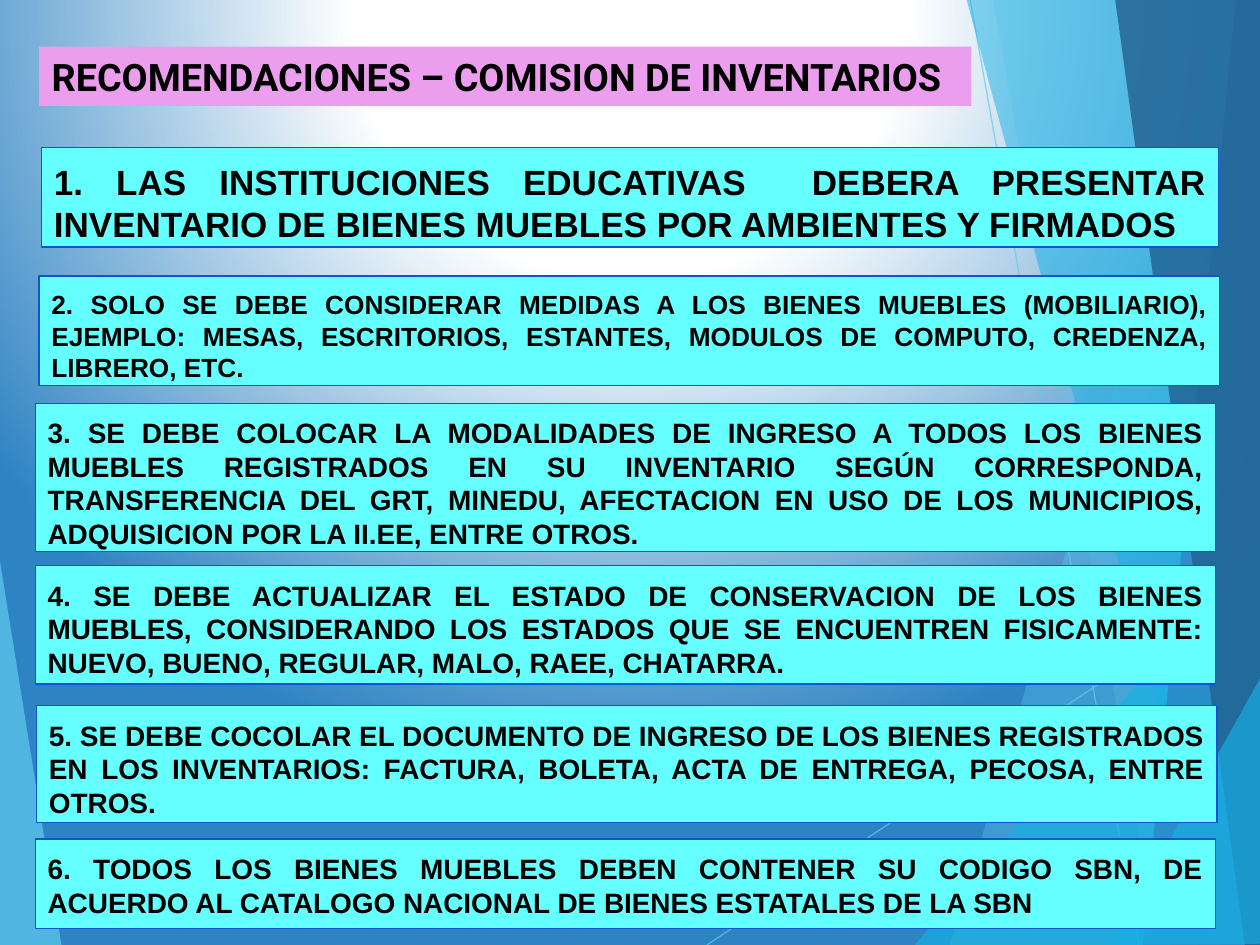
"""Build the slide of recommendations for the inventory commission."""
from dataclasses import dataclass

import lxml.etree
import pptx
import pptx.dml.color
import pptx.enum.shapes
import pptx.enum.text
import pptx.oxml
import pptx.oxml.ns
import pptx.util

Inches = pptx.util.Inches
Pt = pptx.util.Pt
qn = pptx.oxml.ns.qn


@dataclass(frozen=True)
class Theme:
    """Colours, fonts and sizes of the slide."""
    sky: str = "5FCBEF"
    cyan: str = "17B0E4"
    blue: str = "2E83C3"
    navy: str = "226292"
    white: str = "FFFFFF"
    text: str = "000000"
    title_fill: str = "EC9EEE"
    box_fill: str = "66FFFF"
    box_line: str = "1155CC"
    title_font: str = "Roboto"
    body_font: str = "Arial"
    title_size: float = 21.6
    large: float = 20
    medium: float = 16
    small: float = 15
    line_width: float = 0.75
    inset: float = 0.1


THEME = Theme()

FACETS = [
    ([(-0.01, 4.39), (0.49, 7.51), (-0.01, 7.5)], THEME.sky, 70),
    ([(9.75, 0), (7.54, 7.5), (10.02, 7.51), (10.01, 0.01)], THEME.sky, 36),
    ([(7.88, -0.01), (9.19, 7.5), (10.01, 7.5), (10.01, -0.01)], THEME.sky, 20),
    ([(7.26, 7.5), (10, 4.29), (10.01, 7.5)], THEME.cyan, 66),
    ([(7.67, -0.01), (9.7, 7.5), (10.01, 7.49), (10.01, -0.01)], THEME.cyan, 50),
    ([(9.81, -0.01), (9.07, 7.5), (10.01, 7.5), (10, -0.01)], THEME.blue, 70),
    ([(8.85, -0.01), (9.88, 7.5), (10.02, 7.5), (10, -0.01)], THEME.navy, 82),
    ([(8.82, 7.5), (10.02, 5.35), (10.02, 7.49)], THEME.cyan, 66),
]

RAYS = [((5.61, 7.5), (10.01, 4.57)), ((7.7, 0), (9.04, 7.5))]

RECOMMENDATIONS = [
    ((0.33, 1.17, 9.34, 0.79), THEME.large,
     "1. LAS INSTITUCIONES EDUCATIVAS  DEBERA PRESENTAR INVENTARIO DE BIENES "
     "MUEBLES POR AMBIENTES Y FIRMADOS"),
    ((0.31, 2.19, 9.37, 0.87), THEME.small,
     "2. SOLO SE DEBE CONSIDERAR MEDIDAS A LOS BIENES MUEBLES (MOBILIARIO), "
     "EJEMPLO: MESAS, ESCRITORIOS, ESTANTES, MODULOS DE COMPUTO, CREDENZA, "
     "LIBRERO, ETC."),
    ((0.28, 3.2, 9.37, 1.18), THEME.medium,
     "3. SE DEBE COLOCAR LA MODALIDADES DE INGRESO A TODOS LOS BIENES MUEBLES "
     "REGISTRADOS EN SU INVENTARIO SEGÚN CORRESPONDA, TRANSFERENCIA DEL GRT, "
     "MINEDU, AFECTACION EN USO DE LOS MUNICIPIOS, ADQUISICION POR LA II.EE, "
     "ENTRE OTROS."),
    ((0.28, 4.49, 9.37, 0.94), THEME.medium,
     "4. SE DEBE ACTUALIZAR EL ESTADO DE CONSERVACION DE LOS BIENES MUEBLES, "
     "CONSIDERANDO LOS ESTADOS QUE SE ENCUENTREN FISICAMENTE: NUEVO, BUENO, "
     "REGULAR, MALO, RAEE, CHATARRA."),
    ((0.29, 5.6, 9.37, 0.93), THEME.medium,
     "5. SE DEBE COCOLAR EL DOCUMENTO DE INGRESO DE LOS BIENES REGISTRADOS EN "
     "LOS INVENTARIOS: FACTURA, BOLETA, ACTA DE ENTREGA, PECOSA, ENTRE OTROS."),
    ((0.28, 6.66, 9.37, 0.71), THEME.medium,
     "6. TODOS LOS BIENES MUEBLES DEBEN CONTENER SU CODIGO SBN, DE ACUERDO AL "
     "CATALOGO NACIONAL DE BIENES ESTATALES DE LA SBN"),
]


def rgb(value):
    """Return the colour object of a hexadecimal value."""
    return pptx.dml.color.RGBColor.from_string(value)


def set_fill(shape, colour):
    """Give a shape a solid fill."""
    shape.fill.solid()
    shape.fill.fore_color.rgb = rgb(colour)


def set_opacity(properties, percent):
    """Set the opacity of the first colour inside the given properties."""
    colour = next(properties.iter(qn("a:srgbClr")))
    lxml.etree.SubElement(colour, qn("a:alpha"), val=str(percent * 1000))


def set_background(slide):
    """Fill the slide background with a circular gradient."""
    stops = [(0, THEME.white), (35, THEME.white), (100, THEME.blue)]
    stop_xml = "".join(
        f'<a:gs pos="{position * 1000}"><a:srgbClr val="{colour}"/></a:gs>'
        for position, colour in stops)
    background = pptx.oxml.parse_xml(
        f'<p:bg {pptx.oxml.ns.nsdecls("p", "a")}><p:bgPr>'
        f'<a:gradFill rotWithShape="1"><a:gsLst>{stop_xml}</a:gsLst>'
        '<a:path path="circle"><a:fillToRect l="50000" t="-80000" r="50000" '
        'b="180000"/></a:path></a:gradFill><a:effectLst/></p:bgPr></p:bg>')
    slide.element.cSld.insert(0, background)


def add_facet(slide, points, colour, opacity):
    """Add a translucent polygon."""
    start, *others = [(Inches(x), Inches(y)) for x, y in points]
    builder = slide.shapes.build_freeform(*start)
    builder.add_line_segments(others, close=True)
    shape = builder.convert_to_shape()
    shape.shadow.inherit = False
    shape.line.fill.background()
    set_fill(shape, colour)
    set_opacity(shape.element.spPr, opacity)


def add_ray(slide, start, end):
    """Add a thin translucent line."""
    ends = [Inches(length) for length in (*start, *end)]
    ray = slide.shapes.add_connector(
        pptx.enum.shapes.MSO_CONNECTOR.STRAIGHT, *ends)
    ray.line.color.rgb = rgb(THEME.sky)
    ray.line.width = Pt(THEME.line_width)
    properties = ray.element.spPr
    set_opacity(properties, 70)
    lxml.etree.SubElement(properties, qn("a:effectLst"))


def set_text(shape, text, font_name, size, alignment, anchor, margin):
    """Write one bold paragraph in a shape."""
    frame = shape.text_frame
    frame.text = text
    frame.word_wrap = True
    frame.auto_size = pptx.enum.text.MSO_AUTO_SIZE.NONE
    frame.vertical_anchor = anchor
    frame.margin_left = frame.margin_right = Inches(THEME.inset)
    frame.margin_top = frame.margin_bottom = Inches(margin)
    paragraph = frame.paragraphs[0]
    paragraph.alignment = alignment
    paragraph.font.name = font_name
    paragraph.font.size = Pt(size)
    paragraph.font.bold = True
    paragraph.font.color.rgb = rgb(THEME.text)


def place_title(slide, text):
    """Format the title placeholder and bring it before the backdrop."""
    title = slide.shapes.title
    title.left, title.top = Inches(0.31), Inches(0.37)
    title.width, title.height = Inches(7.4), Inches(0.47)
    set_fill(title, THEME.title_fill)
    set_text(title, text, THEME.title_font, THEME.title_size,
             pptx.enum.text.PP_ALIGN.LEFT, pptx.enum.text.MSO_ANCHOR.MIDDLE, 0)
    title.element.getparent().append(title.element)


def add_recommendation(slide, box, size, text):
    """Add a bordered box with a justified recommendation."""
    shape = slide.shapes.add_shape(
        pptx.enum.shapes.MSO_SHAPE.RECTANGLE, *map(Inches, box))
    shape.shadow.inherit = False
    set_fill(shape, THEME.box_fill)
    shape.line.color.rgb = rgb(THEME.box_line)
    shape.line.width = Pt(THEME.line_width)
    set_text(shape, text, THEME.body_font, size,
             pptx.enum.text.PP_ALIGN.JUSTIFY,
             pptx.enum.text.MSO_ANCHOR.TOP, THEME.inset)


def main():
    """Build and save the presentation."""
    presentation = pptx.Presentation()
    presentation.slide_width, presentation.slide_height = Inches(10), Inches(7.5)
    slide = presentation.slides.add_slide(presentation.slide_layouts[5])
    set_background(slide)
    for start, end in RAYS:
        add_ray(slide, start, end)
    for points, colour, opacity in FACETS:
        add_facet(slide, points, colour, opacity)
    place_title(slide, "RECOMENDACIONES – COMISION DE INVENTARIOS")
    for box, size, text in RECOMMENDATIONS:
        add_recommendation(slide, box, size, text)
    presentation.save("out.pptx")


if __name__ == "__main__":
    main()
